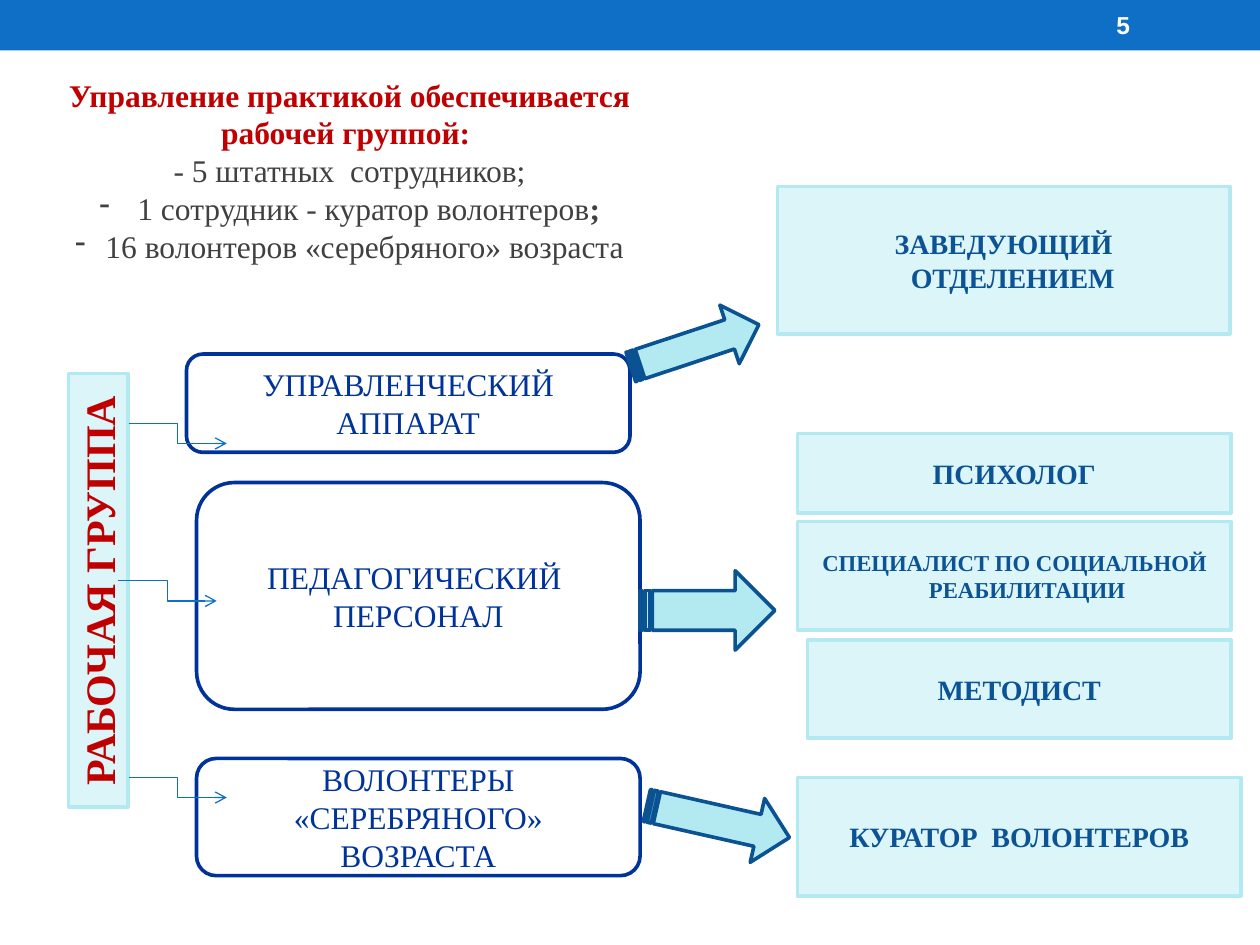
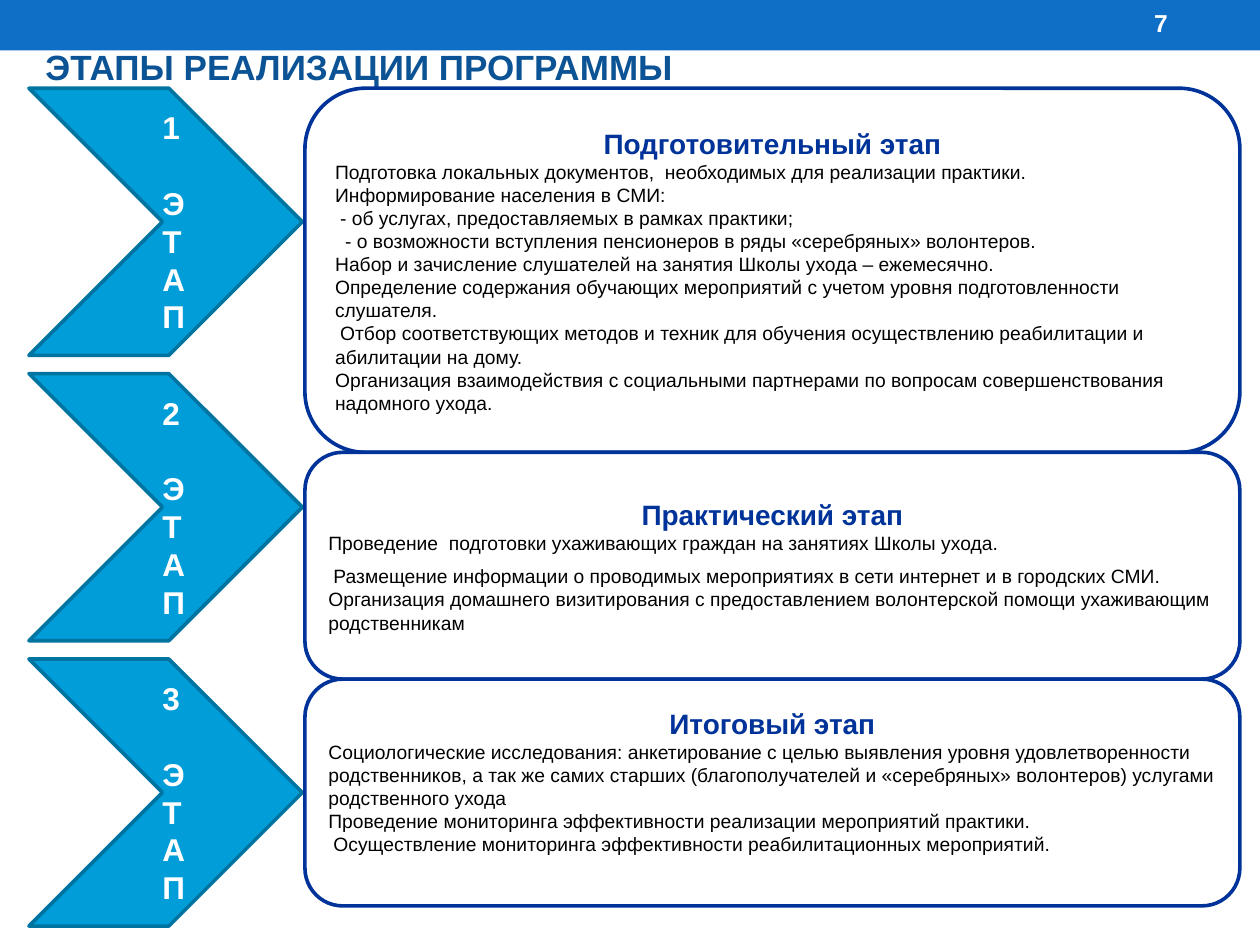
from lxml import etree
from pptx import Presentation
from pptx.dml.color import RGBColor
from pptx.enum import shapes, text
from pptx.oxml.ns import qn
from pptx.util import Inches, Pt

COLORS = dict(
    band="0F6FC6", white="FFFFFF", black="000000", red="C00000", gray="404040",
    navy="003399", blue="0B5394", pale="DBF5F9", aqua="B3EAF2", steel="0B5292",
    chevron="009DD9", chevron_edge="0074A1",
)
SERIF, SANS = "Times New Roman", "Arial"
SHAPE = shapes.MSO_SHAPE
CENTER, LEFT = text.PP_ALIGN.CENTER, text.PP_ALIGN.LEFT
LINE_WIDTH = Pt(2.08)


def rgb(name):
    return RGBColor.from_string(COLORS[name])


def add_run(p, content, font, size, color, bold):
    r = p.add_run()
    r.text = content
    r.font.name, r.font.size, r.font.bold = font, Pt(size), bold
    r.font.color.rgb = rgb(color)


def add_text(tf, content, font=SANS, size=18, color="black", bold=False,
             align=CENTER, margin=0, indent=0, before=0, bullet=None):
    p = tf.paragraphs[0]
    if p.runs:
        p = tf.add_paragraph()
    p.alignment = align
    p.space_before = Pt(before)
    pPr = p._p.get_or_add_pPr()
    pPr.set("marL", str(Inches(margin)))
    pPr.set("indent", str(Inches(indent)))
    if bullet:
        etree.SubElement(pPr, qn("a:buChar")).set("char", bullet)
    add_run(p, content, font, size, color, bold)
    return p


def add_box(slide, kind, at, fill, line=None, rotation=0):
    sp = slide.shapes.add_shape(kind, *map(Inches, at))
    sp.shadow.inherit = False
    sp.rotation = rotation
    sp.fill.solid()
    sp.fill.fore_color.rgb = rgb(fill)
    if line:
        sp.line.color.rgb = rgb(line)
        sp.line.width = LINE_WIDTH
    else:
        sp.line.fill.background()
    sp.text_frame.word_wrap = True
    sp.text_frame.vertical_anchor = text.MSO_ANCHOR.MIDDLE
    return sp


def add_label(slide, at, anchor=text.MSO_ANCHOR.TOP):
    tf = slide.shapes.add_textbox(*map(Inches, at)).text_frame
    tf.word_wrap = True
    tf.vertical_anchor = anchor
    return tf


def add_slide(prs, number, number_at):
    slide = prs.slides.add_slide(prs.slide_layouts[6])
    add_box(slide, SHAPE.RECTANGLE, (0, 0, 10, 0.4), "band")
    tf = add_label(slide, number_at, text.MSO_ANCHOR.MIDDLE)
    add_text(tf, number, size=14, color="white", bold=True)
    return slide


def add_role(slide, at, content, size=16, color="blue", rotation=0):
    sp = add_box(slide, SHAPE.RECTANGLE, at, "pale", "aqua", rotation)
    add_text(sp.text_frame, content, SERIF, size, color, True, margin=0.2, indent=-0.2)


def add_unit(slide, at, lines):
    sp = add_box(slide, SHAPE.ROUNDED_RECTANGLE, at, "white", "navy")
    for line in lines:
        add_text(sp.text_frame, line, SERIF, color="navy")


def add_link(slide, x, y):
    cn = slide.shapes.add_connector(
        shapes.MSO_CONNECTOR.ELBOW, *map(Inches, (x, y, x + 0.78, y + 0.16)))
    cn.line.color.rgb = rgb("band")
    cn.line.width = Pt(0.75)
    etree.SubElement(cn.line._get_or_add_ln(), qn("a:tailEnd")).set("type", "arrow")
    etree.SubElement(cn._element.spPr, qn("a:effectLst"))


def add_arrow(slide, at, rotation=0):
    add_box(slide, SHAPE.STRIPED_RIGHT_ARROW, at, "aqua", "steel", rotation)


def add_stage(slide, number, top, height, heading, items, bottom=0.05):
    chevron_top = 0.7 + 2.265 * (number - 1)
    sp = add_box(slide, SHAPE.CHEVRON, (0.23, chevron_top, 2.17, 2.12),
                 "chevron", "chevron_edge")
    add_text(sp.text_frame, f"{number} ЭТАП", color="white", bold=True)
    sp = add_box(slide, SHAPE.ROUNDED_RECTANGLE, (2.42, top, 7.42, height), "white", "navy")
    tf = sp.text_frame
    tf.margin_bottom = Inches(bottom)
    add_text(tf, heading, size=16, color="navy", bold=True)
    for content, indent, before in items:
        add_text(tf, content, size=11, align=LEFT, indent=indent, before=before)


def build_team(prs):
    slide = add_slide(prs, "5", (8.33, 0.02, 1.17, 0.36))
    tf = add_label(slide, (0.39, 0.55, 4.77, 1.92))
    add_text(tf, "Управление практикой обеспечивается рабочей группой: ",
             SERIF, color="red", bold=True)
    add_text(tf, "- 5 штатных  сотрудников;", SERIF, color="gray")
    bulleted = dict(font=SERIF, color="gray", margin=0.24, indent=-0.24, bullet="-")
    p = add_text(tf, " 1 сотрудник - куратор волонтеров", **bulleted)
    add_run(p, ";", SERIF, 18, "gray", True)
    add_text(tf, "16 волонтеров «серебряного» возраста", **bulleted)

    add_role(slide, (-0.94, 4.45, 3.44, 0.47), "РАБОЧАЯ ГРУППА", 24, "red", 270)
    for at, lines in (
        ((1.48, 2.81, 3.52, 0.78), ["УПРАВЛЕНЧЕСКИЙ", "АППАРАТ"]),
        ((1.56, 3.83, 3.52, 1.8), ["ПЕДАГОГИЧЕСКИЙ ", "ПЕРСОНАЛ"]),
        ((1.56, 6.02, 3.52, 0.93), ["ВОЛОНТЕРЫ «СЕРЕБРЯНОГО» ВОЗРАСТА"]),
    ):
        add_unit(slide, at, lines)
    for x, y in ((1.02, 3.36), (0.94, 4.61), (1.02, 6.17)):
        add_link(slide, x, y)
    for at, content, size in (
        ((6.17, 1.48, 3.59, 1.17), "ЗАВЕДУЮЩИЙ ОТДЕЛЕНИЕМ ", 16),
        ((6.33, 3.44, 3.44, 0.63), "ПСИХОЛОГ", 16),
        ((6.33, 4.14, 3.44, 0.86), "СПЕЦИАЛИСТ ПО СОЦИАЛЬНОЙ РЕАБИЛИТАЦИИ", 13),
        ((6.41, 5.08, 3.36, 0.78), "МЕТОДИСТ", 16),
        ((6.33, 6.17, 3.52, 0.94), "КУРАТОР  ВОЛОНТЕРОВ", 16),
    ):
        add_role(slide, at, content, size)
    add_arrow(slide, (4.98, 2.5, 1.07, 0.49), 341.7)
    add_arrow(slide, (5.08, 4.53, 1.07, 0.63))
    add_arrow(slide, (5.12, 6.26, 1.16, 0.52), 12.7)


def build_stages(prs):
    slide = add_slide(prs, "7", (8.63, 0, 1.17, 0.36))
    tf = add_label(slide, (-0.16, 0.31, 6.02, 0.44))
    add_text(tf, "ЭТАПЫ РЕАЛИЗАЦИИ ПРОГРАММЫ", size=20, color="blue", bold=True)
    add_stage(slide, 1, 0.7, 2.89, "Подготовительный этап", [
        ("Подготовка локальных документов,  необходимых для реализации практики.", 0, 0),
        ("Информирование населения в СМИ:", 0, 0),
        ("- об услугах, предоставляемых в рамках практики;", 0.04, 0),
        ("- о возможности вступления пенсионеров в ряды «серебряных» волонтеров.", 0.08, 0),
        ("Набор и зачисление слушателей на занятия Школы ухода – ежемесячно.", 0, 0),
        ("Определение содержания обучающих мероприятий с учетом уровня "
         "подготовленности слушателя.", 0, 0),
        ("Отбор соответствующих методов и техник для обучения осуществлению "
         "реабилитации и абилитации на дому.", 0.04, 0),
        ("Организация взаимодействия с социальными партнерами по вопросам "
         "совершенствования надомного ухода.", 0, 0),
    ])
    add_stage(slide, 2, 3.59, 1.8, "Практический этап", [
        ("Проведение  подготовки ухаживающих граждан на занятиях Школы ухода.", 0, 0),
        ("Размещение информации о проводимых мероприятиях в сети интернет "
         "и в городских СМИ.", 0.04, 6),
        ("Организация домашнего визитирования с предоставлением волонтерской "
         "помощи ухаживающим родственникам", 0, 0),
    ])
    add_stage(slide, 3, 5.39, 1.8, "Итоговый этап", [
        ("Социологические исследования: анкетирование с целью выявления уровня "
         "удовлетворенности родственников, а так же самих старших (благополучателей "
         "и «серебряных» волонтеров) услугами родственного ухода", 0, 0),
        ("Проведение мониторинга эффективности реализации мероприятий практики.", 0, 0),
        ("Осуществление мониторинга эффективности реабилитационных мероприятий.", 0.04, 0),
    ], bottom=0.23)


def main():
    prs = Presentation()
    prs.slide_width, prs.slide_height = Inches(10), Inches(7.5)
    build_team(prs)
    build_stages(prs)
    prs.save("out.pptx")


if __name__ == "__main__":
    main()
